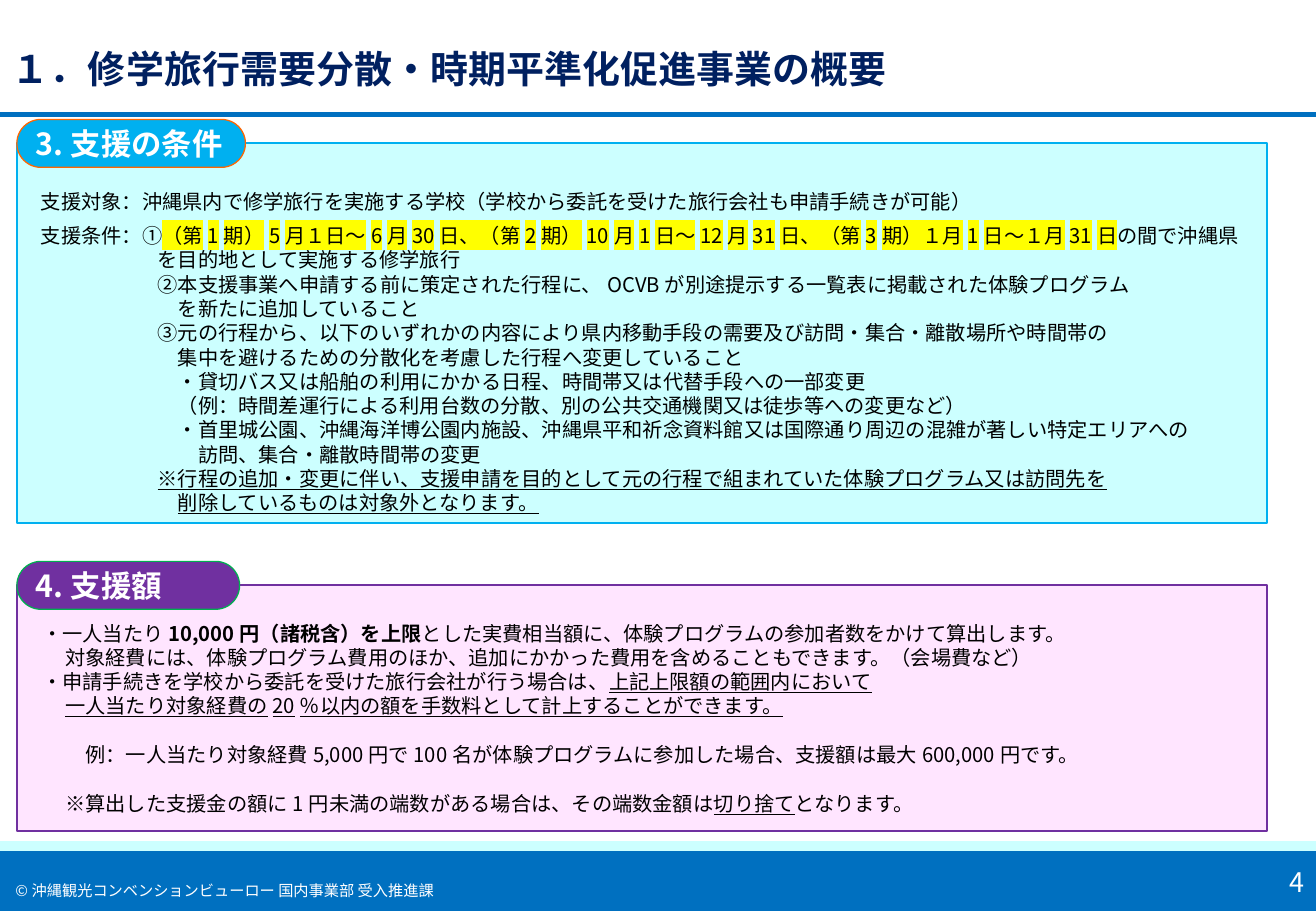
from lxml import etree
from pptx import Presentation
from pptx.dml.color import RGBColor
from pptx.enum.shapes import MSO_CONNECTOR, MSO_SHAPE
from pptx.enum.text import MSO_ANCHOR, PP_ALIGN
from pptx.oxml.ns import qn
from pptx.util import Pt

RECT, PILL = MSO_SHAPE.RECTANGLE, MSO_SHAPE.ROUNDED_RECTANGLE
STRAIGHT = MSO_CONNECTOR.STRAIGHT
TOP, MIDDLE, BOTTOM = MSO_ANCHOR.TOP, MSO_ANCHOR.MIDDLE, MSO_ANCHOR.BOTTOM
LEFT, CENTER, RIGHT = PP_ALIGN.LEFT, PP_ALIGN.CENTER, PP_ALIGN.RIGHT

FONT = "Noto Sans CJK JP"
COLORS = {
    "white": "FFFFFF", "black": "000000", "navy": "002060", "blue": "0070C0",
    "sky": "00B0F0", "aqua": "CCFFFF", "orange": "FF6600", "pink": "FFCCFF",
    "purple": "7030A0", "green": "00B050", "yellow": "FFFF00",
}
WIDTH, HEIGHT = 780, 540
EM = 12
ITEM = 76.3
UNDERLINED = {"underline": True}
MARKED = {"highlight": "yellow"}
BOLD = {"bold": True}

CONDITIONS = [
    {"runs": ["支援対象：沖縄県内で修学旅行を実施する学校（学校から委託を受けた旅行会社も申請手続きが可能）"],
     "left": 7.2},
    {"runs": ["支援条件：①",
              ("（第1期）5月１日～6月30日、（第2期）10月1日～12月31日、（第3期）１月1日～１月31日", MARKED),
              "の間で沖縄県を目的地として実施する修学旅行"],
     "left": ITEM, "hang": 69.1, "before": 6},
    {"runs": ["②本支援事業へ申請する前に策定された行程に、OCVBが別途提示する一覧表に掲載された体験プログラム\n"
              "を新たに追加していること"],
     "left": ITEM + EM, "hang": EM},
    {"runs": ["③元の行程から、以下のいずれかの内容により県内移動手段の需要及び訪問・集合・離散場所や時間帯の\n"
              "集中を避けるための分散化を考慮した行程へ変更していること"],
     "left": ITEM + EM, "hang": EM},
    {"runs": ["・貸切バス又は船舶の利用にかかる日程、時間帯又は代替手段への一部変更"],
     "left": ITEM + 2 * EM, "hang": EM},
    {"runs": ["（例：時間差運行による利用台数の分散、別の公共交通機関又は徒歩等への変更など）"],
     "left": ITEM + EM},
    {"runs": ["・首里城公園、沖縄海洋博公園内施設、沖縄県平和祈念資料館又は国際通り周辺の混雑が著しい特定エリアへの\n"
              "訪問、集合・離散時間帯の変更"],
     "left": ITEM + 2 * EM, "hang": EM},
    {"runs": [("※行程の追加・変更に伴い、支援申請を目的として元の行程で組まれていた体験プログラム又は訪問先を\n"
               "削除しているものは対象外となります。", UNDERLINED)],
     "left": ITEM + EM, "hang": EM},
]
AMOUNTS = [
    {"runs": ["・一人当たり", ("10,000円（諸税含）を上限", BOLD),
              "とした実費相当額に、体験プログラムの参加者数をかけて算出します。\n"
              "対象経費には、体験プログラム費用のほか、追加にかかった費用を含めることもできます。（会場費など）"],
     "left": 21.6, "hang": 13.7},
    {"runs": ["・申請手続きを学校から委託を受けた旅行会社が行う場合は、",
              ("上記上限額の範囲内において\n"
               "一人当たり対象経費の20％以内の額を手数料として計上することができます。", UNDERLINED)],
     "left": 21.6, "hang": 13.7},
    {"runs": ["例：一人当たり対象経費5,000円で100名が体験プログラムに参加した場合、支援額は最大600,000円です。"],
     "left": 21.6 + EM, "before": 14.4},
    {"runs": ["※算出した支援金の額に1円未満の端数がある場合は、その端数金額は",
              ("切り捨て", UNDERLINED), "となります。"],
     "left": 21.6, "before": 14.4},
]


def rgb(name):
    return RGBColor.from_string(COLORS[name])


def add_run(paragraph, text, size, color, bold=False, underline=False, highlight=None):
    run = paragraph.add_run()
    run.text = text
    font = run.font
    font.size, font.bold, font.underline = Pt(size), bold, underline
    font.color.rgb = rgb(color)
    font.name = FONT
    properties = font._element
    latin = properties.find(qn("a:latin"))
    if highlight:
        mark = etree.Element(qn("a:highlight"))
        etree.SubElement(mark, qn("a:srgbClr")).set("val", COLORS[highlight])
        latin.addprevious(mark)
    east_asian = etree.Element(qn("a:ea"))
    east_asian.set("typeface", FONT)
    latin.addnext(east_asian)


def write(shape, paragraphs, size=EM, color="black", bold=False, align=LEFT,
          anchor=TOP, wrap=True, top=3.6, bottom=3.6):
    """Fill a shape with paragraphs of plain or (text, format) runs."""
    frame = shape.text_frame
    frame.word_wrap, frame.vertical_anchor = wrap, anchor
    frame.margin_top, frame.margin_bottom = Pt(top), Pt(bottom)
    for index, content in enumerate(paragraphs):
        paragraph = frame.add_paragraph() if index else frame.paragraphs[0]
        paragraph.alignment = align
        paragraph.line_spacing = Pt(size * 1.2)
        paragraph.space_before = Pt(content.get("before", 0))
        properties = paragraph._p.get_or_add_pPr()
        properties.set("marL", str(Pt(content.get("left", 0))))
        properties.set("indent", str(-Pt(content.get("hang", 0))))
        for item in content["runs"]:
            text, style = (item, {}) if isinstance(item, str) else item
            for number, line in enumerate(text.split("\n")):
                if number:
                    paragraph.add_line_break()
                add_run(paragraph, line, size, color, **{"bold": bold, **style})


def add_block(slide, kind, box, fill, line, line_width, alpha=None):
    block = slide.shapes.add_shape(kind, *map(Pt, box))
    block.shadow.inherit = False
    block.fill.solid()
    block.fill.fore_color.rgb = rgb(fill)
    block.line.color.rgb = rgb(line)
    block.line.width = Pt(line_width)
    if alpha:
        tint = block._element.spPr.find(qn("a:solidFill"))[0]
        etree.SubElement(tint, qn("a:alpha")).set("val", str(alpha * 1000))
    return block


def add_label(slide, box, text, **style):
    label = slide.shapes.add_textbox(*map(Pt, box))
    write(label, [{"runs": [text]}], **style)


def add_header(slide, box):
    left, top, width, height = box
    rule = slide.shapes.add_connector(
        STRAIGHT, Pt(left), Pt(top + height), Pt(left + width), Pt(top + height))
    rule.line.color.rgb = rgb("blue")
    rule.line.width = Pt(3)
    etree.SubElement(rule._element.spPr, qn("a:effectLst"))
    add_label(slide, (left, top + 23, 537, 31), "１．修学旅行需要分散・時期平準化促進事業の概要",
              size=22.5, color="navy", bold=True, anchor=BOTTOM, wrap=False, bottom=0)


def add_section(slide, box, heading, heading_width, paragraphs, fill, accent,
                heading_line, text_top, alpha=None):
    """Place a framed text panel with a pill heading over its top edge."""
    left, top, width, height = box
    panel = add_block(slide, RECT, box, fill, accent, 1.25, alpha)
    write(panel, paragraphs, top=text_top)
    pill = add_block(slide, PILL, (left, top - 14.2, heading_width, 28.4),
                     accent, heading_line, 0.75)
    pill.adjustments[0] = 0.5
    write(pill, [{"runs": [heading]}], size=18, color="white", bold=True, anchor=MIDDLE)


def add_footer(slide, box):
    left, top, width, height = box
    add_block(slide, RECT, box, "blue", "blue", 1.25)
    add_block(slide, RECT, (left, top - 5, width, 5), "aqua", "aqua", 1.25)
    add_label(slide, (left, top + 15, 266, 18), "©沖縄観光コンベンションビューロー 国内事業部 受入推進課",
              size=9, color="white", align=CENTER, anchor=BOTTOM, wrap=False)
    add_label(slide, (left + width - 84, top + 4.5, 84, 28.8), "4",
              size=16, color="white", align=RIGHT, anchor=MIDDLE)


def main():
    deck = Presentation()
    deck.slide_width, deck.slide_height = Pt(WIDTH), Pt(HEIGHT)
    slide = deck.slides.add_slide(deck.slide_layouts[6])
    add_footer(slide, (0, 504, WIDTH, 36))
    add_header(slide, (0, 0, WIDTH, 67.8))
    add_section(slide, (10, 347, 741, 145.4), "4.支援額", 132, AMOUNTS,
                "pink", "purple", "green", 21, alpha=50)
    add_section(slide, (10, 85, 741, 225.2), "3.支援の条件", 135.5, CONDITIONS,
                "aqua", "sky", "orange", 27)
    deck.save("out.pptx")


if __name__ == "__main__":
    main()
